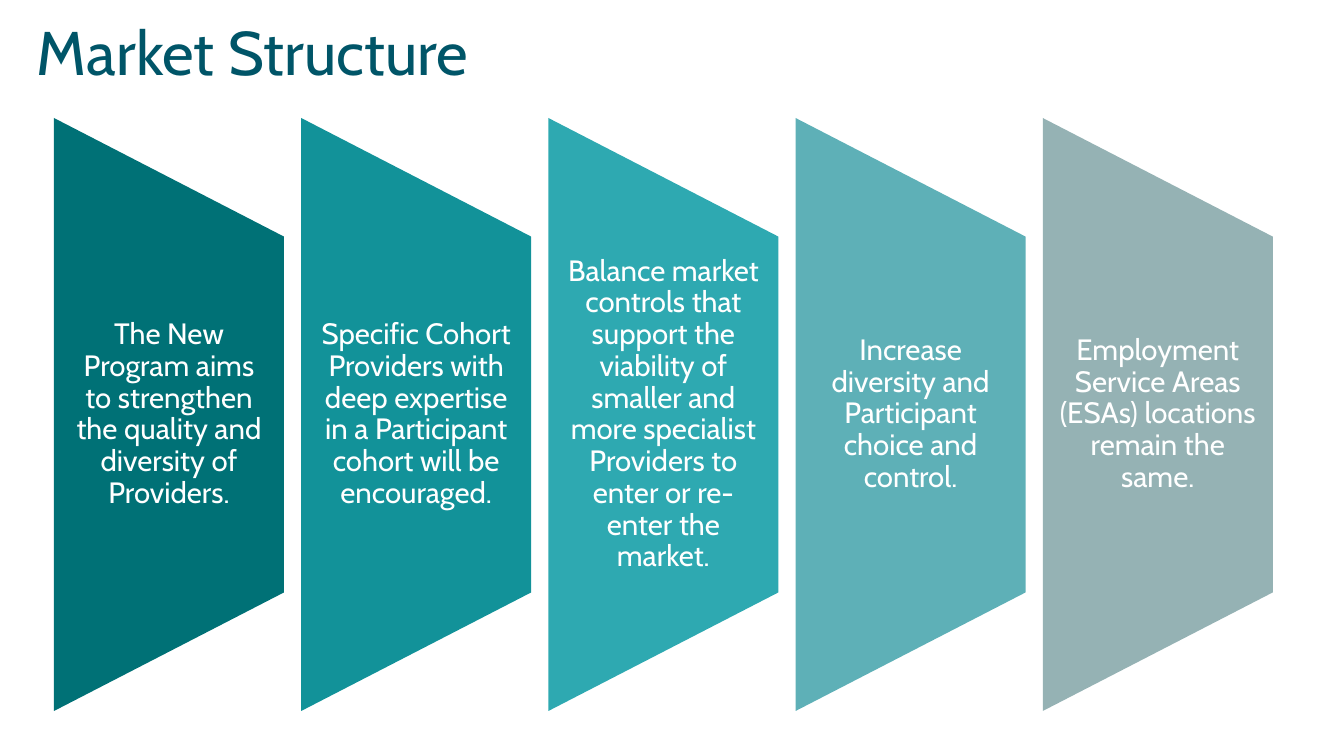
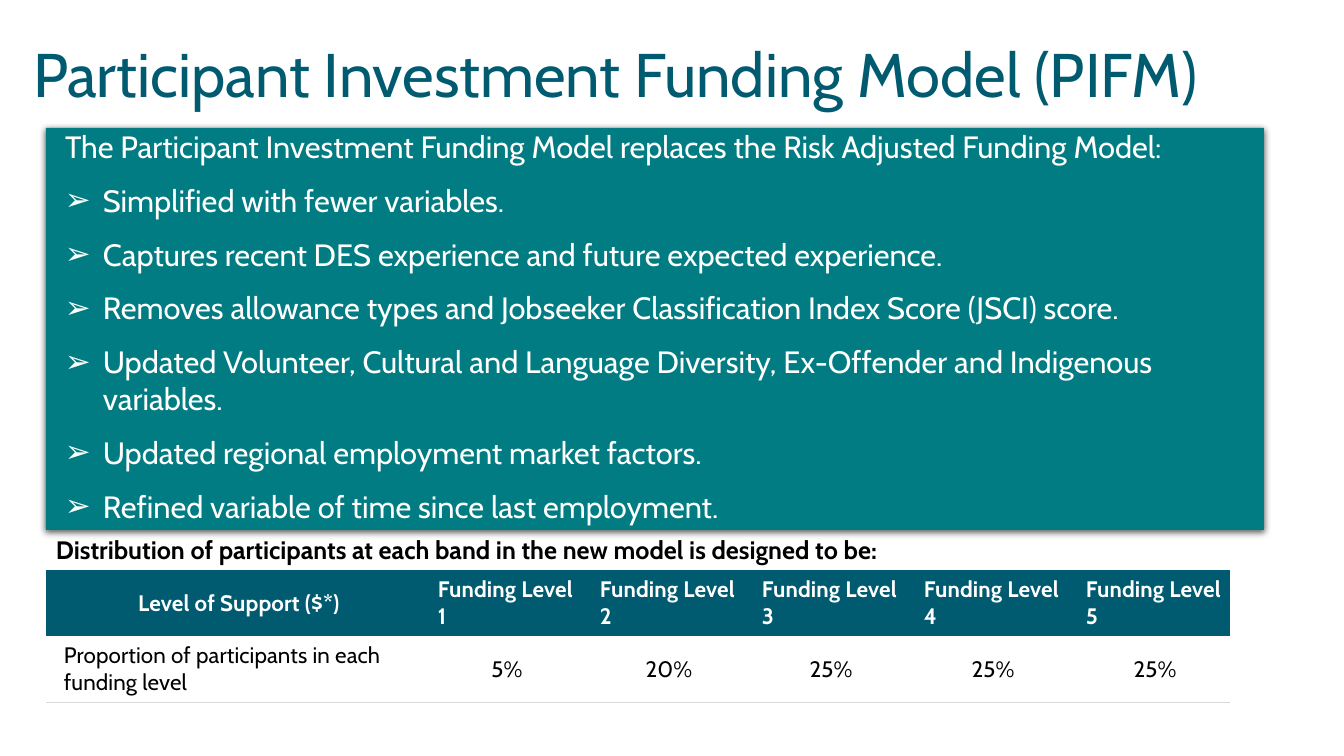
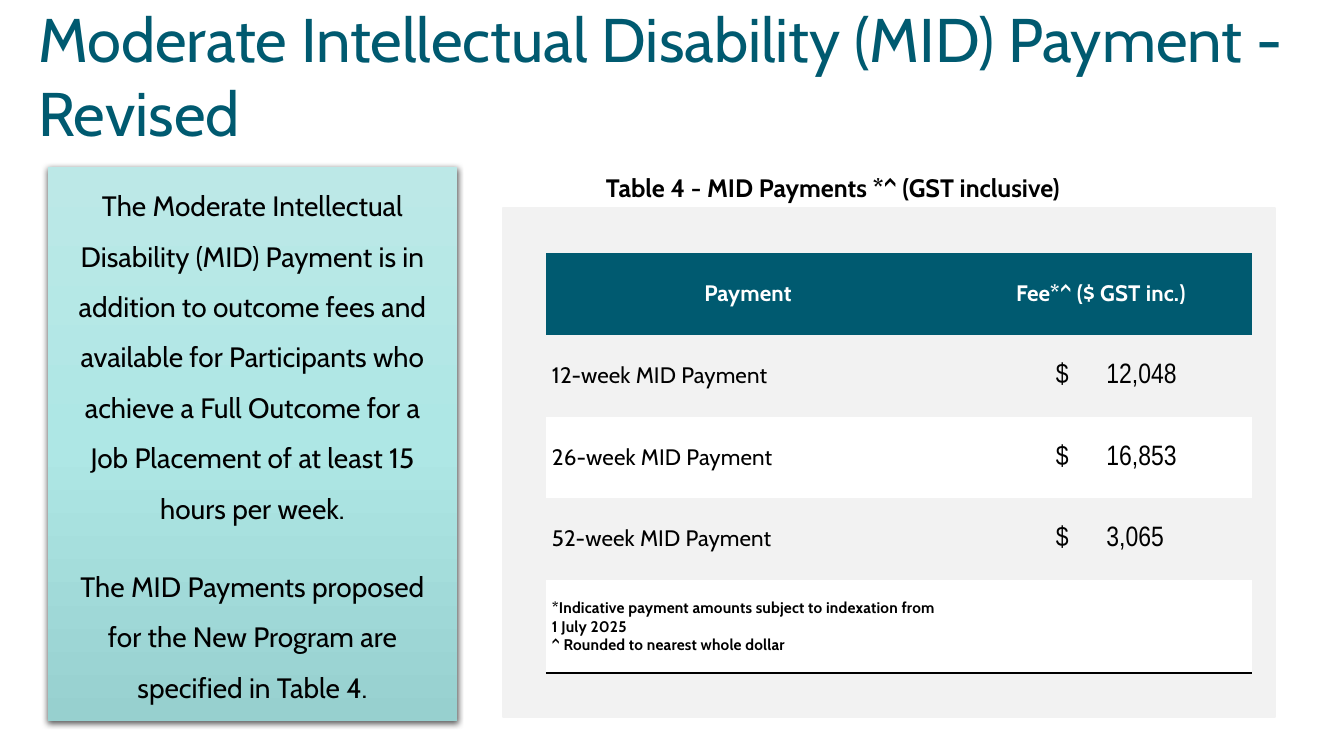
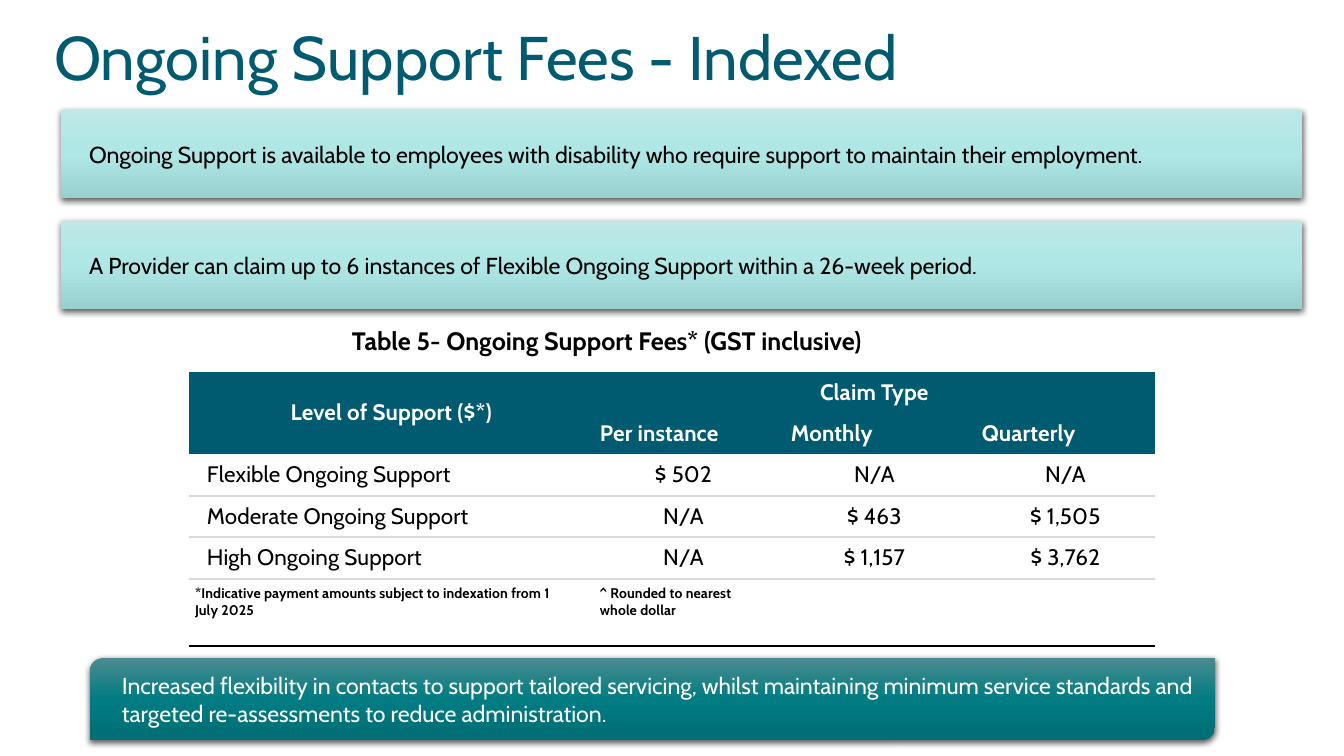
from lxml.etree import SubElement
from pptx import Presentation
from pptx.dml.color import RGBColor
from pptx.enum.shapes import MSO_SHAPE
from pptx.enum.text import MSO_ANCHOR, MSO_AUTO_SIZE, PP_ALIGN
from pptx.oxml.ns import qn
from pptx.util import Pt

WIDE, HIGH = 1344, 756
EMU = 12192000 / WIDE
FONT = "Cabin"
NO_GRID = "{2D5ABB26-0587-4C30-8999-92F81FD0307C}"
LEFT, MID = PP_ALIGN.LEFT, PP_ALIGN.CENTER

HEX = {
    "white": "FFFFFF", "black": "000000", "navy": "005A70", "ink": "005568",
    "teal": "007C82", "panel": "F2F2F2", "rule": "D9D9D6",
}
MINT = ("BCE8E7", "AEE7E5", "97D0CF")
DEEP = ("4B8B90", "007C82", "006E74")

TITLES = [
    ("Market Structure", (37, 42, 520, 46), "ink"),
    ("Participant Investment Funding Model (PIFM)", (33, 16, 1278, 94), "navy"),
    ("Moderate Intellectual Disability (MID) Payment - Revised",
     (38, 0, 1305, 149), "navy"),
    ("Ongoing Support Fees - Indexed", (54, 18, 1158, 75), "navy"),
]

AIMS = [
    ("007176", "The New Program aims to strengthen the quality and diversity "
               "of Providers."),
    ("129299", "Specific Cohort Providers with deep expertise in a Participant "
               "cohort will be encouraged."),
    ("2EA9B1", "Balance market controls that support the viability of smaller "
               "and more specialist Providers to enter or re-enter the market."),
    ("5EB0B7", "Increase diversity and Participant choice and control."),
    ("95B2B4", "Employment Service Areas (ESAs) locations remain the same."),
]

MODEL = "The Participant Investment Funding Model replaces the Risk Adjusted Funding Model:"
CHANGES = [
    "Simplified with fewer variables.",
    "Captures recent DES experience and future expected experience.",
    "Removes allowance types and Jobseeker Classification Index Score (JSCI) score.",
    "Updated Volunteer, Cultural and Language Diversity, Ex-Offender and "
    "Indigenous variables.",
    "Updated regional employment market factors.",
    "Refined variable of time since last employment.",
]

MID_TEXT = [
    "The Moderate Intellectual Disability (MID) Payment is in addition to "
    "outcome fees and available for Participants who achieve a Full Outcome "
    "for a Job Placement of at least 15 hours per week.",
    "The MID Payments proposed for the New Program are specified in Table 4.",
]

SUPPORT = [
    "Ongoing Support is available to employees with disability who require "
    "support to maintain their employment.",
    "A Provider can claim up to 6 instances of Flexible Ongoing Support "
    "within a 26-week period.",
]
FLEX = ("Increased flexibility in contacts to support tailored servicing, whilst "
        "maintaining minimum service standards and targeted re-assessments to "
        "reduce administration.")

# Cell styles: text options under "text", paddings and anchor beside them
WHITE = dict(size=16, bold=True, ink="white", spc=10)
BLACK = dict(size=16, spc=10)
HEAD = dict(text=dict(WHITE, align=MID))
HEAD_IN = dict(text=dict(WHITE, align=MID, left=12))
HEAD_L = dict(text=dict(WHITE, left=12))
LABEL = dict(text=BLACK)
LABEL_IN = dict(text=dict(BLACK, left=12))
VALUE = dict(text=dict(BLACK, align=MID, left=12))
MONEY = dict(text=dict(size=20, font="Arial Narrow", tab=89), pads=(106, 1, 1, 0))
NOTE = dict(text=dict(size=11, bold=True, spc=10))
FOOT = dict(text=dict(size=10, bold=True, spc=10), anchor=MSO_ANCHOR.TOP)
FOOT_IN = dict(FOOT, text=dict(FOOT["text"], left=12))

# Table rows: height, fill, bottom line, cell styles, texts (None: merged away)
LEVELS = [
    (65, "navy", None, [HEAD_IN] + [HEAD_L] * 5,
     ["Level of Support ($*)"] + [f"Funding Level {n}" for n in range(1, 6)]),
    (65, None, "rule", [LABEL_IN] + [VALUE] * 5,
     ["Proportion of participants in each funding level",
      "5%", "20%", "25%", "25%", "25%"]),
]
PAYMENTS = [
    (82, "navy", None, [HEAD] * 2, ["Payment", "Fee*^ ($ GST inc.)"]),
    (82, None, None, [LABEL, MONEY], ["12-week MID Payment", "$\t12,048"]),
    (81, "white", None, [LABEL, MONEY], ["26-week MID Payment", "$\t16,853"]),
    (82, "panel", None, [LABEL, MONEY], ["52-week MID Payment", "$\t3,065"]),
    (93, "white", "black", [NOTE] * 2,
     ["*Indicative payment amounts subject to indexation from 1 July 2025\n"
      "^ Rounded to nearest whole dollar", ""]),
]
FEES = [
    (41, "navy", None, [HEAD_IN] * 4, ["Level of Support ($*)", "Claim Type", None, None]),
    (41, "navy", None, [HEAD_L] * 4, [None, "Per instance", "Monthly", "Quarterly"]),
    (42, None, "rule", [LABEL_IN] + [VALUE] * 3,
     ["Flexible Ongoing Support", "$ 502", "N/A", "N/A"]),
    (41, "white", "rule", [LABEL_IN] + [VALUE] * 3,
     ["Moderate Ongoing Support", "N/A", "$ 463", "$ 1,505"]),
    (42, "white", "rule", [LABEL_IN] + [VALUE] * 3,
     ["High Ongoing Support", "N/A", "$ 1,157", "$ 3,762"]),
    (67, "white", "black", [FOOT] + [FOOT_IN] * 3,
     ["*Indicative payment amounts subject to indexation from 1 July 2025",
      "^ Rounded to nearest whole dollar", "", ""]),
]


def px(n):
    return round(n * EMU)


def rgb(name):
    return RGBColor.from_string(HEX.get(name, name))


def place(shape, box):
    shape.left, shape.top, shape.width, shape.height = map(px, box)


def pad(item, pads):
    """Set the insets of a text frame or cell: left, top, right, bottom."""
    (item.margin_left, item.margin_top,
     item.margin_right, item.margin_bottom) = map(px, pads)


def write(frame, text, size, ink="black", bold=False, font=FONT, align=LEFT,
          left=0, hang=0, bullet=None, tab=None, line=None, before=0, spc=0):
    """Add one paragraph, using the empty first one if there is one."""
    first = frame.paragraphs[0]
    para = frame.add_paragraph() if first.runs else first
    props = para._p.get_or_add_pPr()
    props.set("marL", str(px(left)))
    props.set("indent", str(px(-hang)))
    if bullet:
        SubElement(props, qn("a:buChar"), char=bullet)
    else:
        SubElement(props, qn("a:buNone"))
    if tab:
        tabs = SubElement(props, qn("a:tabLst"))
        SubElement(tabs, qn("a:tab"), pos=str(px(tab)), algn="r")
    para.alignment = align
    para.space_before = Pt(before)
    if line:
        para.line_spacing = line
    run = para.add_run()
    run.text = text
    run.font.name, run.font.size, run.font.bold = font, Pt(size), bold
    run.font.color.rgb = rgb(ink)
    if spc:
        run._r.get_or_add_rPr().set("spc", str(spc))


def paint(shape, fill):
    """Fill with one colour, or with a downward gradient if given a tuple."""
    if isinstance(fill, str):
        shape.fill.solid()
        shape.fill.fore_color.rgb = rgb(fill)
        return
    shape.fill.gradient()
    shape.fill.gradient_angle = 270
    stops = shape._element.spPr.find(qn("a:gradFill")).find(qn("a:gsLst"))
    for old in list(stops):
        stops.remove(old)
    for n, color in enumerate(fill):
        stop = SubElement(stops, qn("a:gs"), pos=str(n * 50000))
        SubElement(stop, qn("a:srgbClr"), val=color)


def shade(shape):
    """Give the shape the soft shadow below."""
    shape.shadow.inherit = False
    glow = SubElement(shape._element.spPr.find(qn("a:effectLst")), qn("a:outerShdw"),
                      blurRad=str(Pt(4.5)), dist=str(Pt(1.5)), dir="5400000",
                      algn="ctr", rotWithShape="0")
    tone = SubElement(glow, qn("a:srgbClr"), val=HEX["black"])
    SubElement(tone, qn("a:alpha"), val="63000")


def block(slide, kind, box, fill):
    shape = slide.shapes.add_shape(kind, *map(px, box))
    shape.shadow.inherit = False
    paint(shape, fill)
    shape.line.fill.background()
    return shape


def card(slide, box, fill, pads, anchor, kind=MSO_SHAPE.RECTANGLE):
    """Add a shadowed gradient box and return its text frame."""
    shape = block(slide, kind, box, fill)
    shade(shape)
    frame = shape.text_frame
    frame.word_wrap, frame.vertical_anchor = True, anchor
    pad(frame, pads)
    return frame


def note(slide, box):
    """Add a wrapping text box and return its text frame."""
    frame = slide.shapes.add_textbox(*map(px, box)).text_frame
    frame.word_wrap = True
    return frame


def caption(slide, box, text):
    write(note(slide, box), text, 18, bold=True)


def start(deck, layout, title):
    text, box, ink = title
    slide = deck.slides.add_slide(deck.slide_layouts[layout])
    place(slide.shapes.title, box)
    frame = slide.shapes.title.text_frame
    frame.word_wrap = True
    frame.auto_size = MSO_AUTO_SIZE.SHAPE_TO_FIT_TEXT
    frame.vertical_anchor = MSO_ANCHOR.BOTTOM
    pad(frame, (0, 0, 0, 0))
    write(frame, text, 44, ink)
    return slide


def set_cell(cell, text, style, fill, edge):
    pad(cell, style.get("pads", (6, 6, 6, 6)))
    cell.vertical_anchor = style.get("anchor", MSO_ANCHOR.MIDDLE)
    if fill:
        cell.fill.solid()
        cell.fill.fore_color.rgb = rgb(fill)
    else:
        cell.fill.background()
    if edge:
        props = cell._tc.get_or_add_tcPr()
        line = SubElement(props, qn("a:lnB"), w=str(Pt(1)))
        SubElement(SubElement(line, qn("a:solidFill")), qn("a:srgbClr"), val=HEX[edge])
        props.insert(0, line)
    for part in text.split("\n") if text else []:
        write(cell.text_frame, part, **style["text"])


def grid(slide, left, top, cols, rows, spans=()):
    high = sum(row[0] for row in rows)
    table = slide.shapes.add_table(
        len(rows), len(cols), *map(px, (left, top, sum(cols), high))).table
    table.first_row = table.horz_banding = False
    table._tbl.tblPr.find(qn("a:tableStyleId")).text = NO_GRID
    for col, width in zip(table.columns, cols):
        col.width = px(width)
    for (r1, c1), (r2, c2) in spans:
        table.cell(r1, c1).merge(table.cell(r2, c2))
    for r, (height, fill, edge, styles, texts) in enumerate(rows):
        table.rows[r].height = px(height)
        for c, (style, text) in enumerate(zip(styles, texts)):
            if text is not None:
                set_cell(table.cell(r, c), text, style, fill, edge)


def market(deck):
    slide = start(deck, 5, TITLES[0])
    left, top, wide, high, step = 54, 118, 230, 593, 247.2
    for n, (color, text) in enumerate(AIMS):
        x = left + n * step
        # The preset is laid out flat about its centre, then turned
        flat = (x + (wide - high) / 2, top + (high - wide) / 2, high, wide)
        block(slide, MSO_SHAPE.FLOWCHART_MANUAL_OPERATION, flat, color).rotation = 270
        frame = note(slide, (x, top + high / 5, wide, high * 3 / 5))
        frame.vertical_anchor = MSO_ANCHOR.MIDDLE
        pad(frame, (15, 0, 15, 0))
        write(frame, text, 21, "white", align=MID, line=0.9)


def funding(deck):
    slide = start(deck, 1, TITLES[1])
    grid(slide, 46, 570, [374] + [162] * 5, LEVELS)
    caption(slide, (46, 529, 1069, 40),
            "Distribution of participants at each band in the new model is designed to be:")
    body = slide.placeholders[1]
    place(body, (46, 128, 1218, 402))
    paint(body, "teal")
    shade(body)
    frame = body.text_frame
    frame.word_wrap, frame.auto_size = True, MSO_AUTO_SIZE.NONE
    frame.vertical_anchor = MSO_ANCHOR.TOP
    pad(frame, (0, 0, 0, 0))
    write(frame, MODEL, 22, "white", left=19)
    for text in CHANGES:
        write(frame, text, 22, "white", left=57, hang=38, bullet="➢", before=12)


def payment(deck):
    slide = start(deck, 5, TITLES[2])
    panel = block(slide, MSO_SHAPE.RECTANGLE, (503, 208, 772, 509), "panel")
    panel.line.color.rgb = rgb("panel")
    panel.line.width = Pt(1.5)
    frame = card(slide, (48, 167, 409, 554), MINT, (16, 5, 16, 5), MSO_ANCHOR.TOP)
    for n, text in enumerate(MID_TEXT):
        write(frame, text, 20, align=MID, line=1.5, before=20 * n)
    grid(slide, 546, 253, [404, 302], PAYMENTS)
    caption(slide, (596, 167, 588, 40), "Table 4 - MID Payments *^ (GST inclusive)")


def support(deck):
    slide = start(deck, 5, TITLES[3])
    pads, mid = (28, 5, 16, 5), MSO_ANCHOR.MIDDLE
    for n, text in enumerate(SUPPORT):
        frame = card(slide, (61, 110 + 111 * n, 1241, 88), MINT, pads, mid)
        write(frame, text, 16.5)
    frame = card(slide, (90, 658, 1125, 82), DEEP, pads, mid,
                 MSO_SHAPE.ROUND_2_DIAG_RECTANGLE)
    write(frame, FLEX, 16.5, "white")
    grid(slide, 189, 372, [393] + [191] * 3, FEES,
         [((0, 0), (1, 0)), ((0, 1), (0, 3))])
    caption(slide, (342, 320, 660, 40), "Table 5- Ongoing Support Fees* (GST inclusive)")


def main():
    deck = Presentation()
    deck.slide_width, deck.slide_height = px(WIDE), px(HIGH)
    for build in (market, funding, payment, support):
        build(deck)
    deck.save("out.pptx")


if __name__ == "__main__":
    main()
